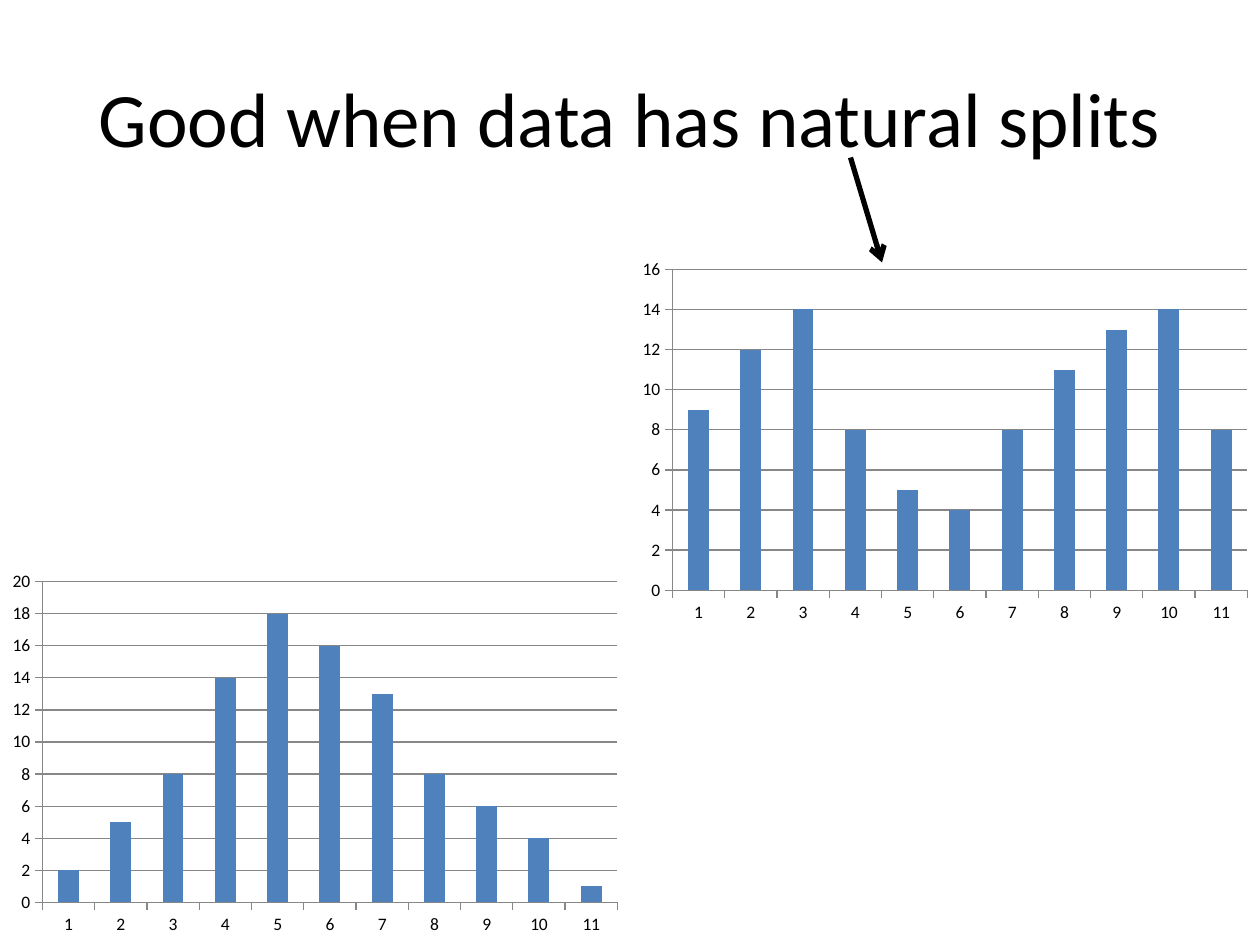
from lxml import etree
from pptx import Presentation
from pptx.chart.data import CategoryChartData
from pptx.dml.color import RGBColor
from pptx.enum.chart import XL_CHART_TYPE, XL_TICK_MARK
from pptx.enum.shapes import MSO_CONNECTOR
from pptx.enum.text import MSO_ANCHOR, PP_ALIGN
from pptx.oxml.ns import qn
from pptx.util import Inches, Pt

COLUMNS = XL_CHART_TYPE.COLUMN_CLUSTERED
TICK_OUT = XL_TICK_MARK.OUTSIDE
STRAIGHT = MSO_CONNECTOR.STRAIGHT
MIDDLE = MSO_ANCHOR.MIDDLE
CENTER = PP_ALIGN.CENTER

FONT = "Calibri"
COLORS = {"text": "000000", "bar": "4F81BD", "axis": "878787"}
WIDTH, HEIGHT = Inches(10), Inches(7.5)

SINGLE_PEAK = [2, 5, 8, 14, 18, 16, 13, 8, 6, 4, 1]
TWO_PEAKS = [9, 12, 14, 8, 5, 4, 8, 11, 13, 14, 8]


def color(name):
    return RGBColor.from_string(COLORS[name])


def share(x, y, w, h):
    """Turn shares of the slide into a box of lengths."""
    return int(WIDTH * x), int(HEIGHT * y), int(WIDTH * w), int(HEIGHT * h)


def style_font(font, size):
    font.name, font.size = FONT, Pt(size)
    font.color.rgb = color("text")


def add_title(slide, box, wording):
    frame = slide.shapes.add_textbox(*box).text_frame
    frame.word_wrap = True
    frame.vertical_anchor = MIDDLE
    frame.text = wording
    heading = frame.paragraphs[0]
    heading.alignment = CENTER
    style_font(heading.runs[0].font, 44)


def add_histogram(slide, box, counts, top):
    data = CategoryChartData()
    data.categories = [str(n) for n in range(1, len(counts) + 1)]
    data.add_series("Series 1", counts)
    chart = slide.shapes.add_chart(COLUMNS, *box, data).chart
    chart.has_legend = chart.has_title = False
    style_font(chart.font, 10)

    # Bars
    plot = chart.plots[0]
    plot.gap_width = 150
    plot.vary_by_categories = False
    bars = plot.series[0].format.fill
    bars.solid()
    bars.fore_color.rgb = color("bar")

    # Axes and gridlines
    counts_axis = chart.value_axis
    counts_axis.minimum_scale, counts_axis.maximum_scale = 0, top
    counts_axis.major_unit = 2
    counts_axis.has_major_gridlines = True
    for axis in (chart.category_axis, counts_axis):
        axis.major_tick_mark = TICK_OUT
    for part in (chart.category_axis, counts_axis, counts_axis.major_gridlines):
        part.format.line.color.rgb = color("axis")
        part.format.line.width = Pt(0.75)


def add_arrow(slide, box):
    left, top, width, height = box
    arrow = slide.shapes.add_connector(STRAIGHT, left, top, left + width, top + height)
    arrow.line.color.rgb = color("text")
    arrow.line.width = Pt(3)
    etree.SubElement(arrow.line._get_or_add_ln(), qn("a:tailEnd"), type="arrow")
    etree.SubElement(arrow._element.spPr, qn("a:effectLst"))


def main():
    deck = Presentation()
    deck.slide_width, deck.slide_height = WIDTH, HEIGHT
    slide = deck.slides.add_slide(deck.slide_layouts[6])

    add_title(slide, share(0.05, 0.04, 0.9, 1 / 6), "Good when data has natural splits")
    add_histogram(slide, share(0, 0.597, 0.5, 0.4), SINGLE_PEAK, 20)
    add_histogram(slide, share(0.5, 4 / 15, 0.5, 0.4), TWO_PEAKS, 16)
    # From the word "natural" to the gap between the two peaks
    add_arrow(slide, share(0.675, 1 / 6, 0.025, 1 / 9))

    deck.save("out.pptx")


if __name__ == "__main__":
    main()
